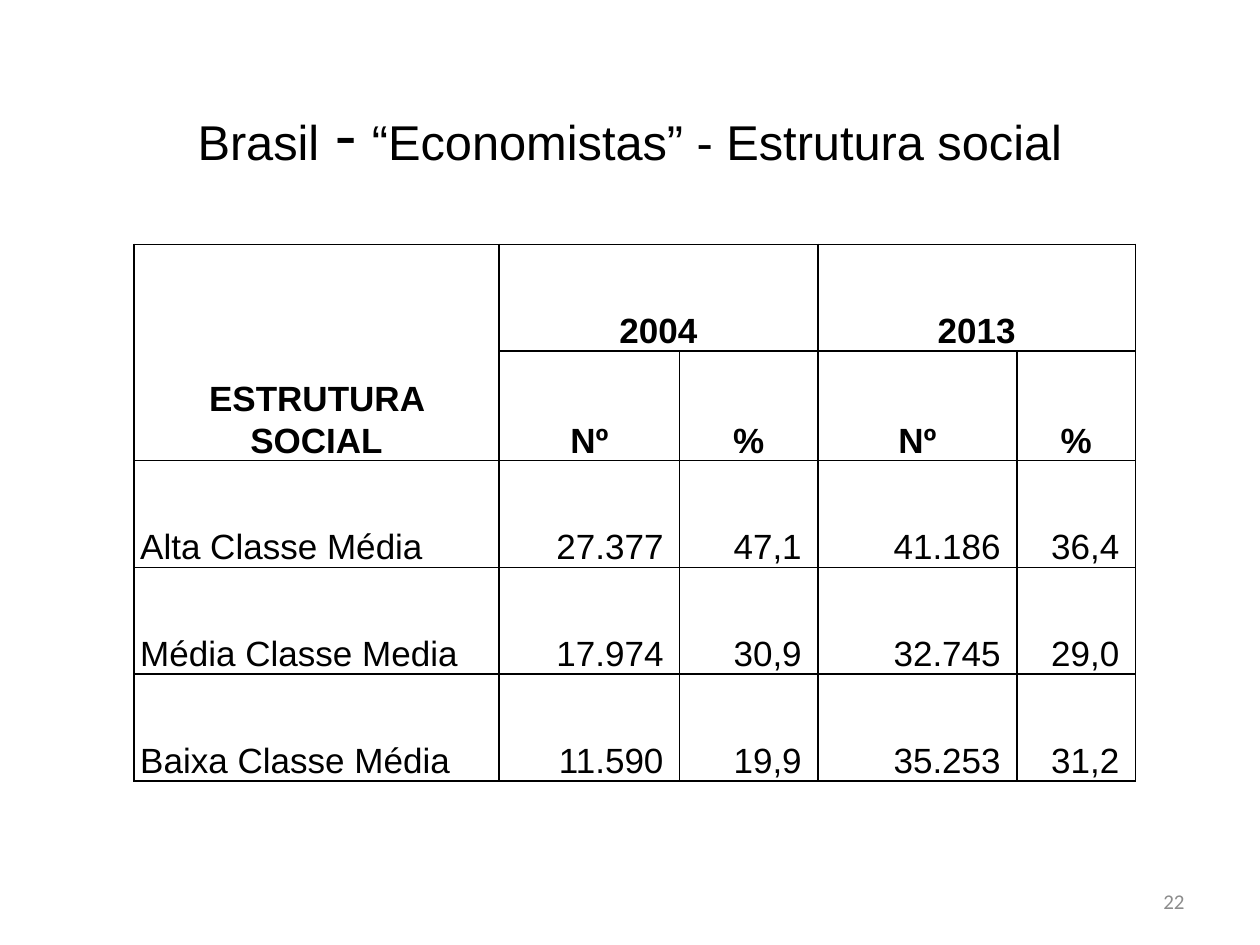
from dataclasses import dataclass

from lxml.etree import SubElement
from pptx import Presentation
from pptx.dml.color import RGBColor
from pptx.enum.text import MSO_ANCHOR, PP_ALIGN
from pptx.oxml import parse_xml
from pptx.oxml.ns import nsdecls, qn
from pptx.util import Pt


@dataclass(frozen=True)
class Theme:
    """Colours, fonts and type sizes of the slide."""
    text: RGBColor = RGBColor(0, 0, 0)
    muted: RGBColor = RGBColor(0x8C, 0x8C, 0x8C)
    border: str = "000000"
    font: str = "Arial"
    accent_font: str = "Calibri"
    title_size: float = 27.9
    dash_size: float = 39.6
    table_size: float = 20
    number_size: float = 12


THEME = Theme()
COLUMN_WIDTHS = [208.7, 103.2, 79, 113.7, 67.8]
ROW_HEIGHTS = [61.1, 62.4, 61.1, 61.1, 61.1]
ROWS = [
    ["ESTRUTURA SOCIAL", "2004", "", "2013", ""],
    ["", "Nº", "%", "Nº", "%"],
    ["Alta Classe Média", "27.377", "47,1", "41.186", "36,4"],
    ["Média Classe Media", "17.974", "30,9", "32.745", "29,0"],
    ["Baixa Classe Média", "11.590", "19,9", "35.253", "31,2"],
]
MERGES = [((0, 0), (1, 0)), ((0, 1), (0, 2)), ((0, 3), (0, 4))]
HEADER_ROWS = 2


def format_font(font, name, size, color, bold=False):
    """Set the typeface, size, colour and weight of a font."""
    font.name, font.size, font.bold = name, Pt(size), bold
    font.color.rgb = color


def add_borders(cell):
    """Draw a one-point line on each side of a cell."""
    properties = cell._tc.get_or_add_tcPr()
    for index, side in enumerate(("lnL", "lnR", "lnT", "lnB")):
        line = parse_xml(f'<a:{side} {nsdecls("a")} w="{Pt(1)}"/>')
        fill = SubElement(line, qn("a:solidFill"))
        SubElement(fill, qn("a:srgbClr"), val=THEME.border)
        properties.insert(index, line)


def place_title(slide, left, top, width, height):
    """Place the title with its larger dash."""
    title = slide.shapes.title
    title.left, title.top, title.width, title.height = map(Pt, (left, top, width, height))
    frame = title.text_frame
    frame.word_wrap = True
    frame.vertical_anchor = MSO_ANCHOR.MIDDLE
    frame.margin_top, frame.margin_bottom = Pt(21.6), Pt(3.6)
    paragraph = frame.paragraphs[0]
    paragraph.alignment = PP_ALIGN.CENTER
    for text, name, size in (
        ("Brasil", THEME.font, THEME.title_size),
        (" - ", THEME.accent_font, THEME.dash_size),
        ("“Economistas” - Estrutura social", THEME.font, THEME.title_size),
    ):
        run = paragraph.add_run()
        run.text = text
        format_font(run.font, name, size, THEME.text)


def format_cell(cell, text, row, column):
    """Fill in and format one table cell."""
    is_header = row < HEADER_ROWS
    is_number = not is_header and column > 0
    cell.fill.background()
    add_borders(cell)
    cell.vertical_anchor = MSO_ANCHOR.BOTTOM
    cell.margin_top = cell.margin_bottom = 0
    cell.margin_left = Pt(3.6)
    cell.margin_right = Pt(9.2 if is_number else 3.6)
    cell.text_frame.text = text
    paragraph = cell.text_frame.paragraphs[0]
    paragraph.line_spacing = 1.07
    paragraph.alignment = (
        PP_ALIGN.CENTER if is_header else PP_ALIGN.RIGHT if is_number else PP_ALIGN.LEFT
    )
    format_font(paragraph.font, THEME.font, THEME.table_size, THEME.text, is_header)
    for run in paragraph.runs:
        format_font(run.font, THEME.font, THEME.table_size, THEME.text, is_header)


def place_table(slide, left, top):
    """Place the table of social structure by year."""
    table = slide.shapes.add_table(
        len(ROWS), len(COLUMN_WIDTHS), Pt(left), Pt(top),
        Pt(sum(COLUMN_WIDTHS)), Pt(sum(ROW_HEIGHTS)),
    ).table
    table.first_row = table.horz_banding = False
    for column, width in zip(table.columns, COLUMN_WIDTHS):
        column.width = Pt(width)
    for row, height in zip(table.rows, ROW_HEIGHTS):
        row.height = Pt(height)
    for row, values in enumerate(ROWS):
        for column, text in enumerate(values):
            format_cell(table.cell(row, column), text, row, column)
    for first, last in MERGES:
        table.cell(*first).merge(table.cell(*last))


def place_slide_number(slide, left, top, width, height):
    """Place the slide number at the lower right."""
    box = slide.shapes.add_textbox(*map(Pt, (left, top, width, height)))
    frame = box.text_frame
    frame.word_wrap = True
    frame.vertical_anchor = MSO_ANCHOR.MIDDLE
    frame.text = "22"
    paragraph = frame.paragraphs[0]
    paragraph.alignment = PP_ALIGN.RIGHT
    format_font(paragraph.runs[0].font, THEME.accent_font, THEME.number_size, THEME.muted)


def main():
    """Build and save the presentation."""
    presentation = Presentation()
    presentation.slide_width, presentation.slide_height = Pt(720), Pt(540)
    slide = presentation.slides.add_slide(presentation.slide_layouts[5])
    place_title(slide, 36, 21.6, 648, 90)
    place_table(slide, 76.5, 139.6)
    place_slide_number(slide, 516, 500.5, 168, 28.75)
    presentation.save("out.pptx")


if __name__ == "__main__":
    main()
